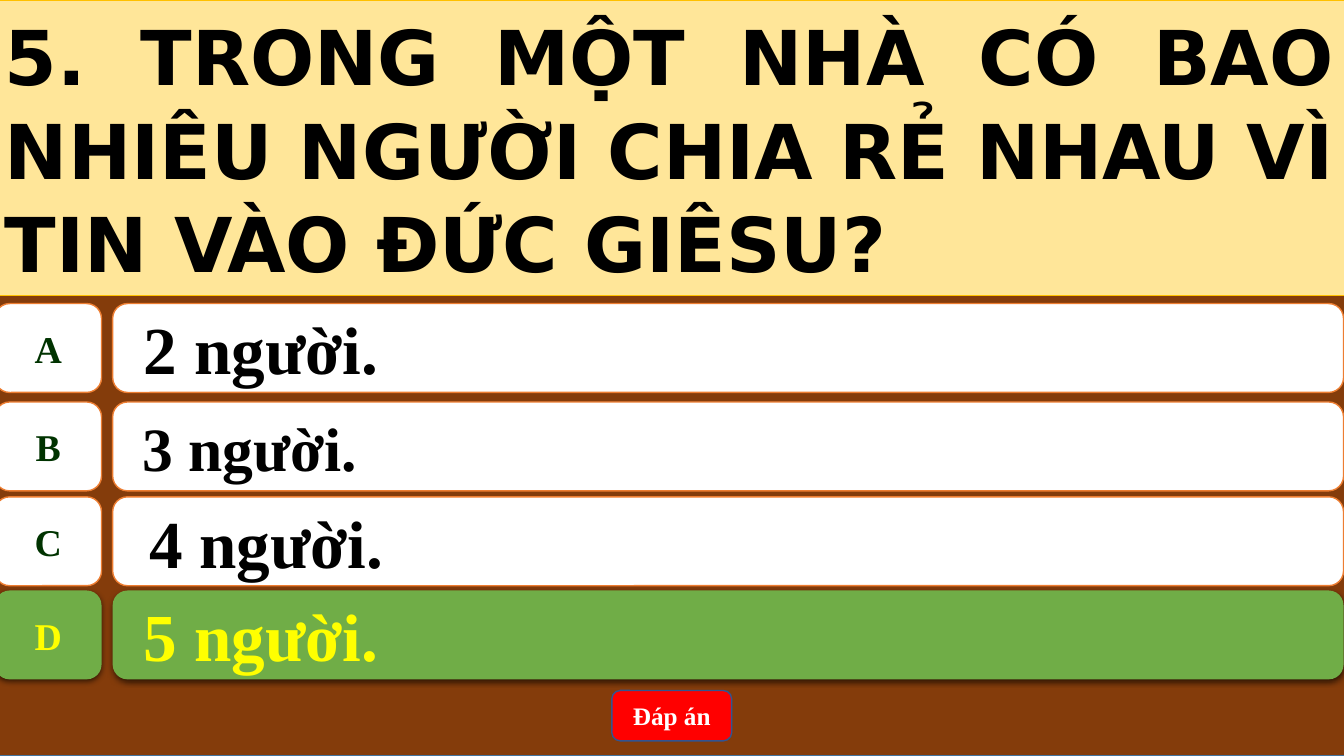
from dataclasses import dataclass

from lxml.etree import SubElement
from pptx import Presentation
from pptx.dml.color import RGBColor
from pptx.enum.shapes import MSO_SHAPE
from pptx.enum.text import MSO_ANCHOR, MSO_AUTO_SIZE, PP_ALIGN
from pptx.oxml.ns import qn
from pptx.util import Cm, Pt


@dataclass(frozen=True)
class Theme:
    board: str = "843C0B"
    board_edge: str = "43739E"
    question: str = "FFE699"
    question_edge: str = "FFC000"
    card: str = "FFFFFF"
    card_edge: str = "ED7D31"
    letter: str = "003300"
    ink: str = "000000"
    correct: str = "70AD47"
    correct_ink: str = "FFFF00"
    button: str = "FF0000"
    button_edge: str = "325491"
    button_ink: str = "FFFFFF"
    question_font: str = "DejaVu Sans"
    answer_font: str = "Times New Roman"
    question_size: int = 54
    answer_size: int = 48
    small_answer_size: int = 44
    letter_size: int = 27
    button_size: int = 18


THEME = Theme()
LEFT = -0.13
BOARD_WIDTH = 34.01
ROW_HEIGHT = 2.24


def paint(shape, fill, edge=None, weight=1):
    shape.fill.solid()
    shape.fill.fore_color.rgb = RGBColor.from_string(fill)
    if edge:
        shape.line.color.rgb = RGBColor.from_string(edge)
        shape.line.width = Pt(weight)
    else:
        shape.line.fill.background()


def add_panel(shapes, preset, left, top, width, height, fill, edge=None):
    panel = shapes.add_shape(preset, Cm(left), Cm(top), Cm(width), Cm(height))
    panel.shadow.inherit = False
    paint(panel, fill, edge)
    return panel


def write(shape, text, font, size, color, align):
    frame = shape.text_frame
    frame.text = text
    frame.vertical_anchor = MSO_ANCHOR.MIDDLE
    paragraph = frame.paragraphs[0]
    paragraph.alignment = align
    style = paragraph.runs[0].font
    style.name = font
    style.size = Pt(size)
    style.bold = True
    style.color.rgb = RGBColor.from_string(color)


def add_soft_shadow(shape):
    effects = shape.element.spPr.find(qn("a:effectLst"))
    shadow = SubElement(effects, qn("a:outerShdw"), blurRad=str(Pt(4.5)),
                        dist=str(Pt(1.5)), dir="5400000", algn="ctr", rotWithShape="0")
    black = SubElement(shadow, qn("a:srgbClr"), val=THEME.ink)
    SubElement(black, qn("a:alpha"), val="63000")


def add_answer(slide, top, letter, answer, size, inset, correct=False):
    fill = THEME.correct if correct else THEME.card
    edge = None if correct else THEME.card_edge
    row = slide.shapes.add_group_shape().shapes
    badge = add_panel(row, MSO_SHAPE.FLOWCHART_ALTERNATE_PROCESS,
                      LEFT, top, 2.69, ROW_HEIGHT, fill, edge)
    write(badge, letter, THEME.answer_font, THEME.letter_size,
          THEME.correct_ink if correct else THEME.letter, PP_ALIGN.CENTER)
    badge.text_frame.word_wrap = False
    bar = add_panel(row, MSO_SHAPE.ROUNDED_RECTANGLE,
                    2.84, top, 31.02, ROW_HEIGHT, fill, edge)
    write(bar, answer, THEME.answer_font, size,
          THEME.correct_ink if correct else THEME.ink, PP_ALIGN.LEFT)
    bar.text_frame.margin_left = Cm(inset)
    if correct:
        add_soft_shadow(badge)
        add_soft_shadow(bar)


def add_question(slide, text):
    question = slide.shapes.title
    question.left, question.top = Cm(LEFT), Cm(0)
    question.width, question.height = Cm(BOARD_WIDTH), Cm(7.44)
    paint(question, THEME.question, THEME.question_edge, 0.5)
    write(question, text, THEME.question_font, THEME.question_size,
          THEME.ink, PP_ALIGN.JUSTIFY)
    question.text_frame.word_wrap = True
    question.text_frame.auto_size = MSO_AUTO_SIZE.NONE
    question.text_frame.paragraphs[0].line_spacing = 1.03
    question.element.getparent().append(question.element)


def add_button(slide, text):
    button = add_panel(slide.shapes, MSO_SHAPE.ROUNDED_RECTANGLE,
                       15.42, 17.4, 3.02, 1.27, THEME.button, THEME.button_edge)
    write(button, text, THEME.answer_font, THEME.button_size,
          THEME.button_ink, PP_ALIGN.CENTER)


def main():
    deck = Presentation()
    deck.slide_width, deck.slide_height = Cm(33.87), Cm(19.05)
    slide = deck.slides.add_slide(deck.slide_layouts[5])
    add_panel(slide.shapes, MSO_SHAPE.RECTANGLE, LEFT, 0, BOARD_WIDTH, 19.05,
              THEME.board, THEME.board_edge)
    add_question(slide, "5. TRONG MỘT NHÀ CÓ BAO NHIÊU NGƯỜI CHIA RẺ NHAU VÌ TIN VÀO ĐỨC GIÊSU?")
    add_answer(slide, 7.65, "A", "2 người.", THEME.answer_size, 0.68)
    add_answer(slide, 10.13, "B", "3 người.", THEME.small_answer_size, 0.64)
    add_answer(slide, 12.52, "C", "4 người.", THEME.answer_size, 0.81)
    add_answer(slide, 14.88, "D", "5 người.", THEME.answer_size, 0.68, correct=True)
    add_button(slide, "Đáp án")
    deck.save("out.pptx")


if __name__ == "__main__":
    main()
